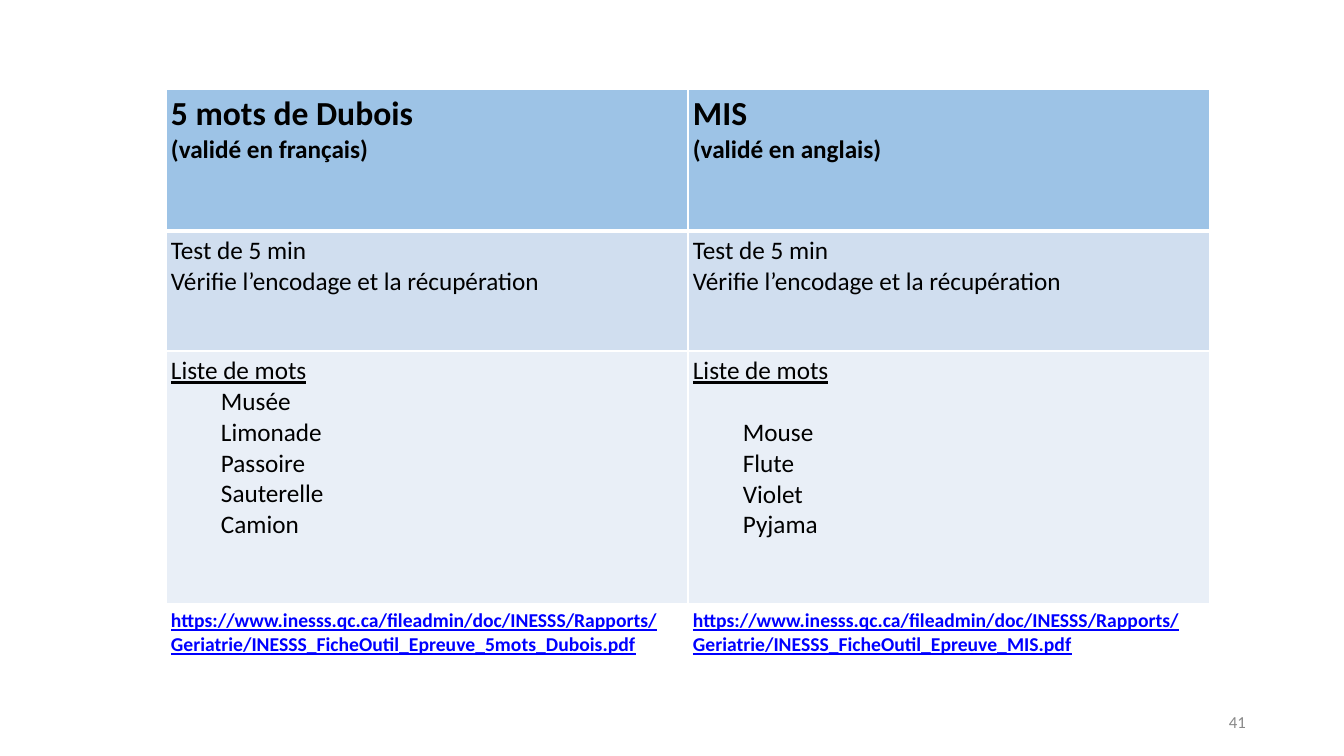
from lxml.etree import SubElement
from pptx import Presentation
from pptx.dml.color import RGBColor
from pptx.enum.text import MSO_ANCHOR as Anchor, PP_ALIGN as Align
from pptx.oxml.ns import qn
from pptx.util import Pt

TITLE = dict(size=24, bold=True)
SUBTITLE = dict(size=18, bold=True)
BODY = dict(size=18)
HEADING = dict(size=18, underline=True)
WORD = dict(size=18, indent=50)
FIRST_WORD = dict(WORD, before=22)
ADDRESS = dict(size=14, bold=True, underline=True, color="0000FF")

SUMMARY = [("Test de 5 min\nVérifie l’encodage et la récupération", BODY)]
FOLDER = "https://www.inesss.qc.ca/fileadmin/doc/INESSS/Rapports/Geriatrie/"

TESTS = [
    [
        [("5 mots de Dubois", TITLE), ("(validé en français)", SUBTITLE)],
        SUMMARY,
        [("Liste de mots", HEADING), ("Musée", WORD), ("Limonade", WORD),
         ("Passoire", WORD), ("Sauterelle", WORD), ("Camion", WORD)],
        [(FOLDER + "INESSS_FicheOutil_Epreuve_5mots_Dubois.pdf", ADDRESS)],
    ],
    [
        [("MIS", TITLE), ("(validé en anglais)", SUBTITLE)],
        SUMMARY,
        [("Liste de mots", HEADING), ("Mouse", FIRST_WORD), ("Flute", WORD),
         ("Violet", WORD), ("Pyjama", WORD)],
        [(FOLDER + "INESSS_FicheOutil_Epreuve_MIS.pdf", ADDRESS)],
    ],
]
ROWS = [(142, "9DC3E6"), (120, "D0DEEF"), (253, "E9EFF7"), (152, "FFFFFF")]
COLUMN_WIDTH = 522
TABLE_LEFT, TABLE_TOP = 166, 89
MARGIN = 5
SLIDE_NUMBER = "41"


def px(length):
    return round(length * 914400 / 100.8)


def rgb(color):
    return RGBColor.from_string(color)


def write(paragraph, text, size, color="000000", bold=False, underline=False,
          indent=0, before=0, align=Align.LEFT):
    paragraph.text = text
    paragraph.alignment = align
    if indent:
        properties = paragraph._p.get_or_add_pPr()
        properties.set("marL", str(px(indent)))
        properties.set("indent", "0")
        paragraph.level = 1
    if before:
        paragraph.space_before = Pt(before)
    for run in paragraph.runs:
        font = run.font
        font.name = "Calibri"
        font.size = Pt(size)
        font.bold = bold
        font.underline = underline
        font.color.rgb = rgb(color)


def set_margins(box):
    box.margin_left = box.margin_right = px(MARGIN)
    box.margin_top = box.margin_bottom = px(MARGIN)


def set_borders(cell, **widths):
    properties = cell._tc.get_or_add_tcPr()
    for side in "LRTB":
        line = SubElement(properties, qn(f"a:ln{side}"), w=str(Pt(widths.get(side, 1))))
        fill = SubElement(line, qn("a:solidFill"))
        SubElement(fill, qn("a:srgbClr"), val="FFFFFF")


def add_comparison(slide):
    width = COLUMN_WIDTH * len(TESTS)
    height = sum(row_height for row_height, _ in ROWS)
    table = slide.shapes.add_table(len(ROWS), len(TESTS), px(TABLE_LEFT), px(TABLE_TOP),
                                   px(width), px(height)).table
    table.first_row = table.horz_banding = False
    for column, test in zip(table.columns, TESTS):
        column.width = px(COLUMN_WIDTH)
    for row_index, (row_height, color) in enumerate(ROWS):
        table.rows[row_index].height = px(row_height)
        for column_index, test in enumerate(TESTS):
            cell = table.cell(row_index, column_index)
            set_margins(cell)
            set_borders(cell, T=3 if row_index == 1 else 1, B=3 if row_index == 0 else 1)
            cell.fill.solid()
            cell.fill.fore_color.rgb = rgb(color)
            frame = cell.text_frame
            for index, (text, style) in enumerate(test[row_index]):
                paragraph = frame.add_paragraph() if index else frame.paragraphs[0]
                write(paragraph, text, **style)


def add_slide_number(slide):
    frame = slide.shapes.add_textbox(px(1223), px(708), px(28), px(27)).text_frame
    frame.word_wrap = False
    frame.vertical_anchor = Anchor.MIDDLE
    set_margins(frame)
    write(frame.paragraphs[0], SLIDE_NUMBER, size=12, color="888888", align=Align.RIGHT)


def main():
    presentation = Presentation()
    presentation.slide_width, presentation.slide_height = px(1344), px(756)
    slide = presentation.slides.add_slide(presentation.slide_layouts[6])
    add_slide_number(slide)
    add_comparison(slide)
    presentation.save("out.pptx")


if __name__ == "__main__":
    main()
